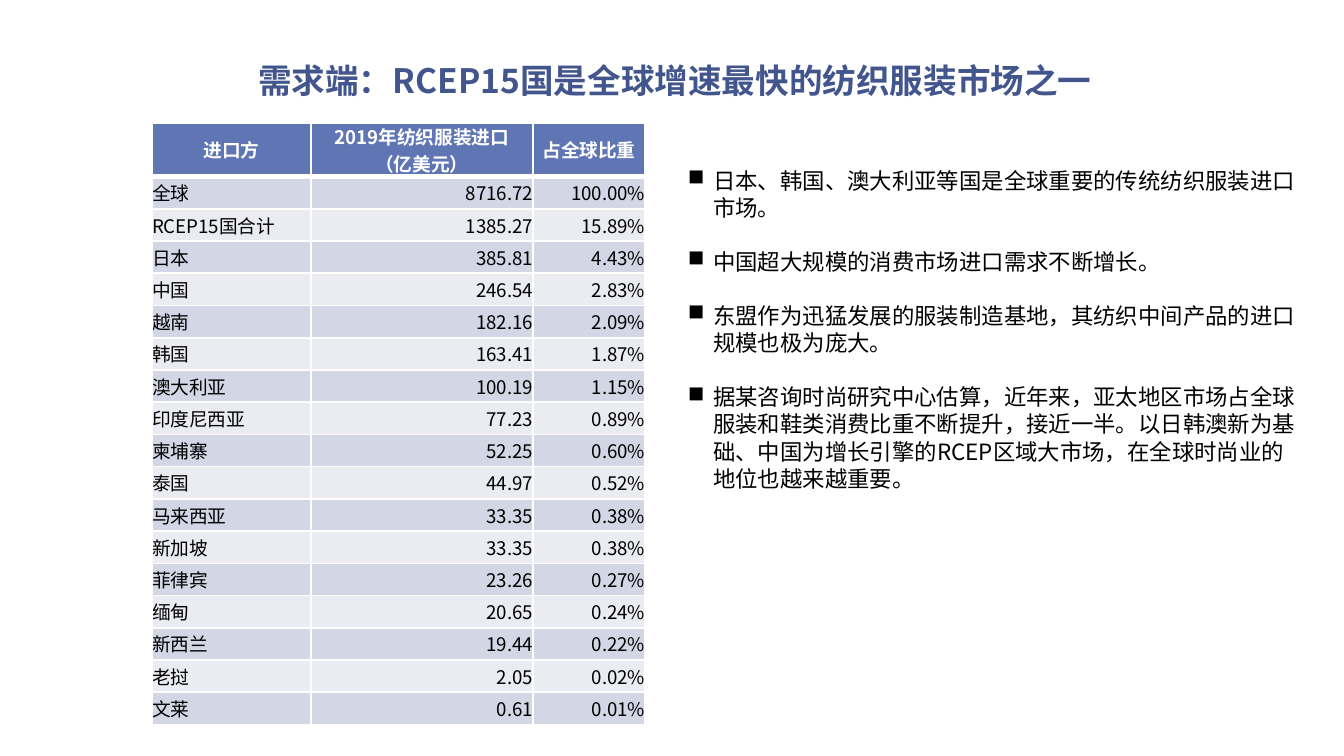
from lxml import etree
from pptx import Presentation
from pptx import util as u
from pptx.dml.color import RGBColor
from pptx.enum import text
from pptx.oxml import ns

Pt = u.Pt
FONT = "Noto Sans CJK SC"
COLORS = {
    "title": "42568D", "head": "6076B4", "odd": "D2D6E5",
    "even": "EAECF2", "white": "FFFFFF", "black": "000000",
}
TITLE = "需求端：RCEP15国是全球增速最快的纺织服装市场之一"
HEADS = ["进口方", "2019年纺织服装进口\n（亿美元）", "占全球比重"]
IMPORTS = [
    ("全球", "8716.72", "100.00%"),
    ("RCEP15国合计", "1385.27", "15.89%"),
    ("日本", "385.81", "4.43%"),
    ("中国", "246.54", "2.83%"),
    ("越南", "182.16", "2.09%"),
    ("韩国", "163.41", "1.87%"),
    ("澳大利亚", "100.19", "1.15%"),
    ("印度尼西亚", "77.23", "0.89%"),
    ("柬埔寨", "52.25", "0.60%"),
    ("泰国", "44.97", "0.52%"),
    ("马来西亚", "33.35", "0.38%"),
    ("新加坡", "33.35", "0.38%"),
    ("菲律宾", "23.26", "0.27%"),
    ("缅甸", "20.65", "0.24%"),
    ("新西兰", "19.44", "0.22%"),
    ("老挝", "2.05", "0.02%"),
    ("文莱", "0.61", "0.01%"),
]
POINTS = [
    "日本、韩国、澳大利亚等国是全球重要的传统纺织服装进口市场。",
    "中国超大规模的消费市场进口需求不断增长。",
    "东盟作为迅猛发展的服装制造基地，其纺织中间产品的进口规模也极为庞大。",
    "据某咨询时尚研究中心估算，近年来，亚太地区市场占全球服装和鞋类消费比重不断提升，接近一半。"
    "以日韩澳新为基础、中国为增长引擎的RCEP区域大市场，在全球时尚业的地位也越来越重要。",
]


def color(key):
    return RGBColor.from_string(COLORS[key])


def style(para, size, key, bold=False, align=text.PP_ALIGN.LEFT):
    para.alignment = align
    font = para.font
    font.name, font.size, font.bold = FONT, Pt(size), bold
    font.color.rgb = color(key)
    for run in para.runs:
        east = etree.SubElement(run._r.get_or_add_rPr(), ns.qn("a:ea"))
        east.set("typeface", FONT)
        run.font.name = FONT


def border(cell, widths):
    props = cell._tc.get_or_add_tcPr()
    for side, width in zip("LRTB", widths):
        line = etree.SubElement(props, ns.qn(f"a:ln{side}"), w=str(Pt(width)))
        fill = etree.SubElement(line, ns.qn("a:solidFill"))
        etree.SubElement(fill, ns.qn("a:srgbClr"), val=COLORS["white"])


def add_title(slide, left, top, width, height):
    title = slide.shapes.title
    title.left, title.top, title.width, title.height = map(Pt, (left, top, width, height))
    frame = title.text_frame
    frame.text = TITLE
    frame.vertical_anchor = text.MSO_ANCHOR.MIDDLE
    para = frame.paragraphs[0]
    para.line_spacing = Pt(30)
    style(para, 18, "title", True, text.PP_ALIGN.CENTER)


def add_imports(slide, left, top, width, height):
    rows = [HEADS, *IMPORTS]
    table = slide.shapes.add_table(
        len(rows), len(HEADS), Pt(left), Pt(top), Pt(width), Pt(height)).table
    for col, share in zip(table.columns, (85, 119, 60)):
        col.width = Pt(width * share / 264)
    head = 25.2
    for i, row in enumerate(rows):
        table.rows[i].height = Pt(head if i == 0 else (height - head) / len(IMPORTS))
        for j, value in enumerate(row):
            cell = table.cell(i, j)
            cell.text = value
            cell.vertical_anchor = text.MSO_ANCHOR.MIDDLE
            cell.margin_left = cell.margin_right = cell.margin_top = cell.margin_bottom = 0
            border(cell, (1, 1, 3 if i == 1 else 1, 3 if i == 0 else 1))
            cell.fill.solid()
            cell.fill.fore_color.rgb = color("head" if i == 0 else "odd" if i % 2 else "even")
            if i == 0:
                align = text.PP_ALIGN.CENTER
            else:
                align = text.PP_ALIGN.RIGHT if j else text.PP_ALIGN.LEFT
            for para in cell.text_frame.paragraphs:
                style(para, 10, "black" if i else "white", i == 0, align)


def add_points(slide, left, top, width, height):
    frame = slide.shapes.add_textbox(Pt(left), Pt(top), Pt(width), Pt(height)).text_frame
    frame.word_wrap = True
    frame.text = "\n".join(POINTS)
    for para in frame.paragraphs:
        para.line_spacing = para.space_after = Pt(14.5)
        style(para, 12, "black")
        props = para._p.get_or_add_pPr()
        props.set("marL", str(Pt(13.5)))
        props.set("indent", str(-Pt(13.5)))
        mark = etree.Element(ns.qn("a:buChar"), char="■")
        props.find(ns.qn("a:defRPr")).addprevious(mark)


def main():
    deck = Presentation()
    deck.slide_width, deck.slide_height = Pt(720), Pt(405)
    slide = deck.slides.add_slide(deck.slide_layouts[5])
    add_title(slide, 37.5, 7.2, 648, 62.6)
    add_imports(slide, 81.5, 65.8, 264, 319)
    add_points(slide, 361.5, 85.7, 342.7, 184.3)
    deck.save("out.pptx")


if __name__ == "__main__":
    main()
